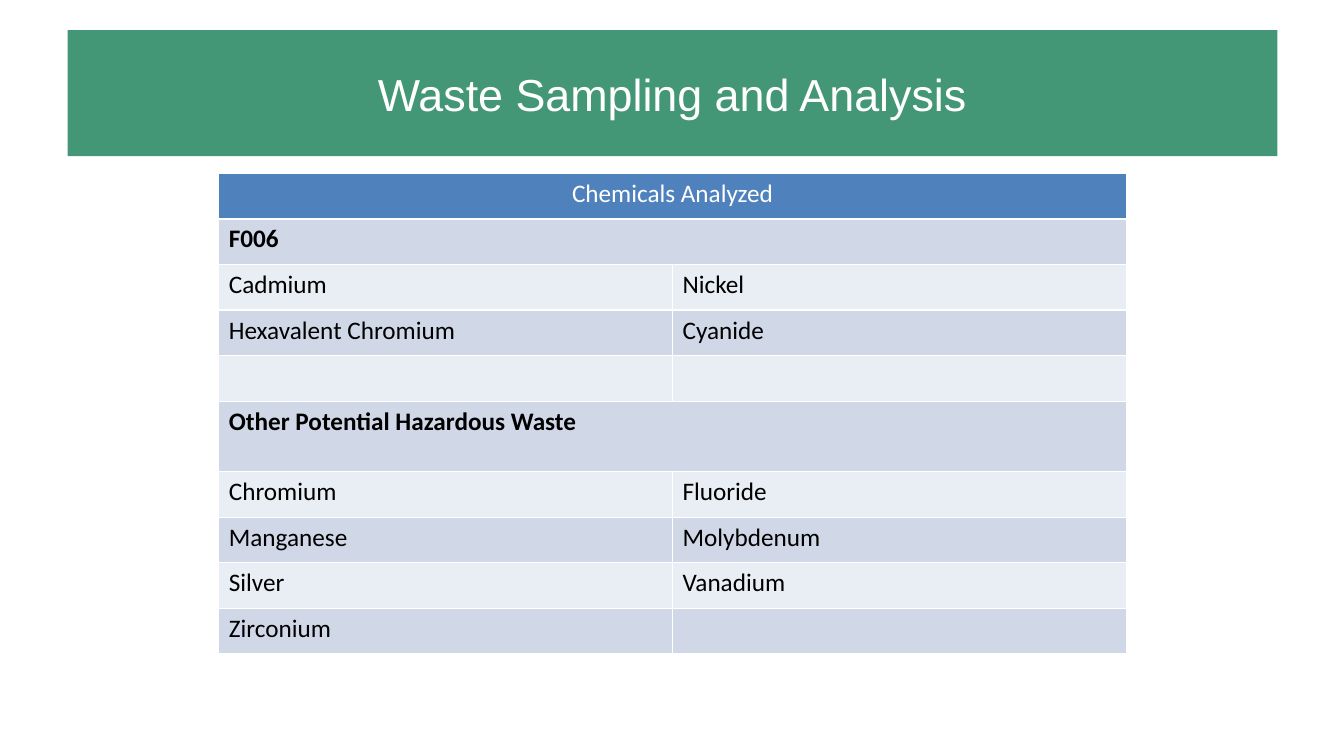
from pptx import Presentation
from pptx.dml.color import RGBColor
from pptx.enum.text import MSO_ANCHOR, PP_ALIGN
from pptx.util import Inches, Pt

COLORS = {
    "banner": "439777",
    "header": "4F81BD",
    "dark band": "D0D8E8",
    "light band": "E9EDF4",
    "white": "FFFFFF",
    "black": "000000",
}


def paint(fill, color):
    fill.solid()
    fill.fore_color.rgb = RGBColor.from_string(COLORS[color])


def write(frame, text, font, size, color, align, bold=False):
    para = frame.paragraphs[0]
    para.alignment = align
    span = para.add_run()
    span.text = text
    span.font.name = font
    span.font.size = Pt(size)
    span.font.bold = bold
    span.font.color.rgb = RGBColor.from_string(COLORS[color])


deck = Presentation()
deck.slide_width = Inches(13.33)
deck.slide_height = Inches(7.5)
page = deck.slides.add_slide(deck.slide_layouts[5])

# Title banner
title = page.shapes.title
title.left, title.top = Inches(0.67), Inches(0.3)
title.width, title.height = Inches(12), Inches(1.25)
paint(title.fill, "banner")
title.text_frame.vertical_anchor = MSO_ANCHOR.MIDDLE
write(title.text_frame, "Waste Sampling and Analysis", "Arial", 32, "white", PP_ALIGN.CENTER)

# Chemicals: a row with one entry spans both columns
chemicals = [
    ["Chemicals Analyzed"],
    ["F006"],
    ["Cadmium", "Nickel"],
    ["Hexavalent Chromium", "Cyanide"],
    ["", ""],
    ["Other Potential Hazardous Waste"],
    ["Chromium", "Fluoride"],
    ["Manganese", "Molybdenum"],
    ["Silver", "Vanadium"],
    ["Zirconium", ""],
]
table_height = 4.77
tall_row, tall_height = 5, 0.7
row_height = (table_height - tall_height) / (len(chemicals) - 1)

# Table; its default style draws the white rules
table = page.shapes.add_table(
    len(chemicals), 2, Inches(2.17), Inches(1.72), Inches(9), Inches(table_height)
).table

for row, entries in enumerate(chemicals):
    table.rows[row].height = Inches(tall_height if row == tall_row else row_height)
    is_header = row == 0
    is_section = len(entries) == 1 and not is_header
    band = "header" if is_header else "dark band" if row % 2 else "light band"
    for cell in table.rows[row].cells:
        paint(cell.fill, band)
    if len(entries) == 1:
        table.cell(row, 0).merge(table.cell(row, 1))
    for column, entry in enumerate(entries):
        if entry:
            write(
                table.cell(row, column).text_frame, entry, "Calibri", 18,
                "white" if is_header else "black",
                PP_ALIGN.CENTER if is_header else PP_ALIGN.LEFT,
                is_section,
            )

deck.save("out.pptx")
